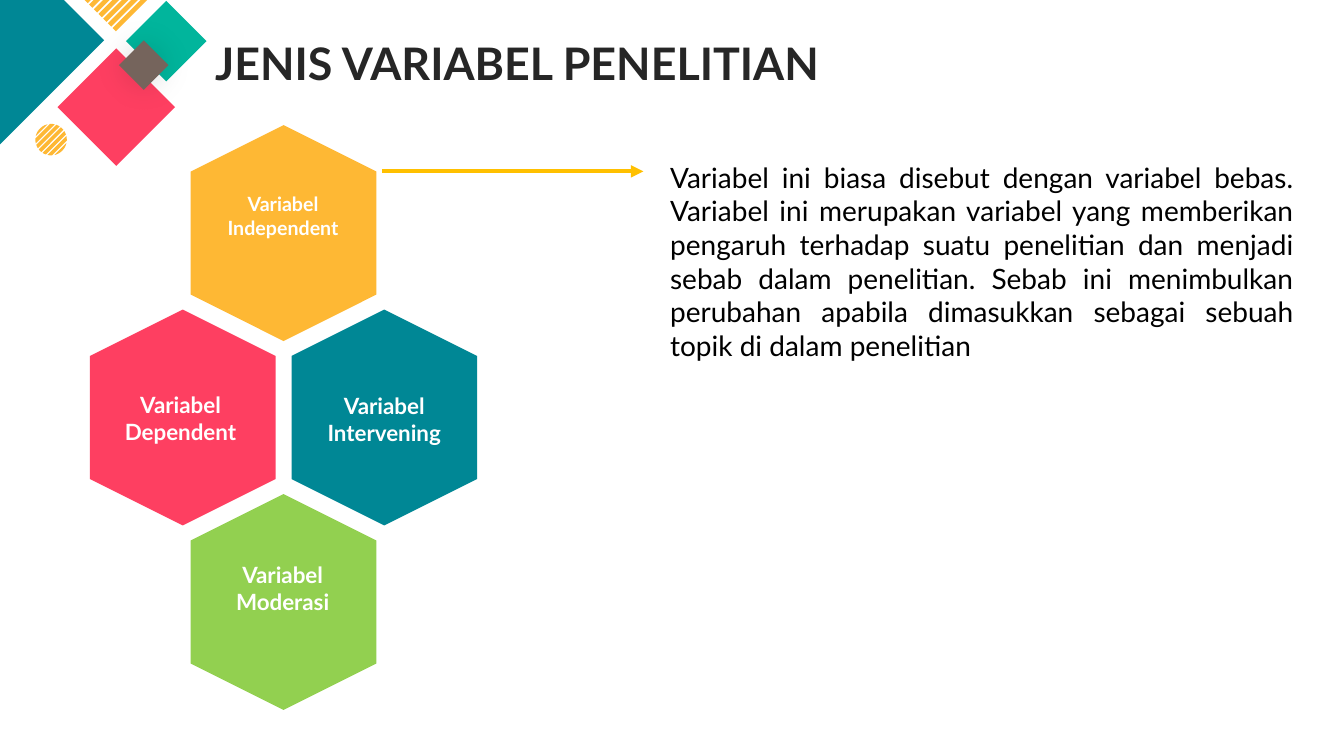
from dataclasses import dataclass
from math import cos, pi, sin

from lxml import etree
from pptx import Presentation
from pptx import util as u
from pptx.dml.color import RGBColor
from pptx.enum import shapes, text
from pptx.oxml import ns

# Square grid: 160 columns by 90 rows
COLUMNS, ROWS = 160, 90
SLIDE_WIDTH, SLIDE_HEIGHT = u.Inches(13.3333), u.Inches(7.5)
CELL = SLIDE_HEIGHT / ROWS

TEAL = RGBColor(0x00, 0x87, 0x95)
RED = RGBColor(0xFE, 0x3F, 0x61)
AMBER = RGBColor(0xFE, 0xB8, 0x34)
MINT = RGBColor(0x01, 0xB5, 0x9C)
TAUPE = RGBColor(0x75, 0x64, 0x5C)
GREEN = RGBColor(0x92, 0xD0, 0x50)
GOLD = RGBColor(0xFF, 0xC0, 0x00)
INK = RGBColor(0x26, 0x26, 0x26)
BLACK = RGBColor(0x00, 0x00, 0x00)
WHITE = RGBColor(0xFF, 0xFF, 0xFF)

HEXAGON_LENGTH, HEXAGON_BREADTH = 25.7, 22.1
HEXAGON_LEFT, HEXAGON_TOP = 20.9, 16.7
HEXAGON_STEP_X, HEXAGON_STEP_Y = 12, 21.96

FRAME_FORMAT = {
    "auto_size": text.MSO_AUTO_SIZE.SHAPE_TO_FIT_TEXT,
    "vertical_anchor": text.MSO_ANCHOR.TOP,
}


@dataclass(frozen=True)
class Box:
    left: float
    top: float
    width: float
    height: float


@dataclass(frozen=True)
class Diamond:
    left: float
    top: float
    size: float
    color: RGBColor


@dataclass(frozen=True)
class Variable:
    label: str
    column: int
    row: int
    color: RGBColor
    label_box: Box
    size: int = 16


DIAMONDS = (
    Diamond(-12.6, -7.7, 25, TEAL),
    Diamond(6.84, 5.76, 14, RED),
    Diamond(15, 0.1, 9.6, MINT),
    Diamond(14.16, 4.8, 5.9, TAUPE),
)
VARIABLES = (
    Variable("Variabel Independent", 0, 0, AMBER, Box(24.4, 22.3, 18.6, 6.8), 14),
    Variable("Variabel Dependent", -1, 1, RED, Box(12.6, 46, 17.8, 6.5)),
    Variable("Variabel Intervening", 1, 1, TEAL, Box(35.6, 46.1, 20.3, 7.7)),
    Variable("Variabel Moderasi", 0, 2, GREEN, Box(23.5, 66.2, 20.3, 7.7)),
)
EXPLANATION = (
    "Variabel ini biasa disebut dengan variabel bebas. Variabel ini merupakan "
    "variabel yang memberikan pengaruh terhadap suatu penelitian dan menjadi "
    "sebab dalam penelitian. Sebab ini menimbulkan perubahan apabila dimasukkan "
    "sebagai sebuah topik di dalam penelitian"
)


def cells(count: float) -> int:
    return round(count * CELL)


def place(box: Box) -> tuple[int, ...]:
    return tuple(cells(n) for n in (box.left, box.top, box.width, box.height))


def paint(shape, color: RGBColor, rotation: float = 0) -> None:
    shape.shadow.inherit = False
    shape.fill.solid()
    shape.fill.fore_color.rgb = color
    shape.line.fill.background()
    shape.rotation = rotation


def add_solid(slide, preset, box: Box, color: RGBColor, rotation: float = 0):
    solid = slide.shapes.add_shape(preset, *place(box))
    paint(solid, color, rotation)
    return solid


def add_words(slide, box: Box, words: str, size: int, color: RGBColor,
              bold: bool = True, align=text.PP_ALIGN.CENTER, wrap: bool = True) -> None:
    frame = slide.shapes.add_textbox(*place(box)).text_frame
    for name, value in {**FRAME_FORMAT, "word_wrap": wrap}.items():
        setattr(frame, name, value)
    paragraph = frame.paragraphs[0]
    paragraph.alignment = align
    run = paragraph.add_run()
    run.text = words
    font_format = {"name": "Lato", "size": u.Pt(size), "bold": bold}
    for name, value in font_format.items():
        setattr(run.font, name, value)
    run.font.color.rgb = color


def add_glow_shadow(shape) -> None:
    effects = shape._element.spPr.find(ns.qn("a:effectLst"))
    shadow = etree.SubElement(effects, ns.qn("a:outerShdw"),
                              blurRad=str(u.Pt(21)), dist="0", dir="0",
                              algn="ctr", rotWithShape="0")
    shade = etree.SubElement(shadow, ns.qn("a:srgbClr"), val="000000")
    etree.SubElement(shade, ns.qn("a:alpha"), val="13000")


def add_striped_disc(slide, center_x: float, center_y: float, radius: float) -> None:
    """Cut a disc into seven upright bands and turn it by 45 degrees."""
    pitch, half_band, steps = 0.32, 0.115, 8
    builder = None
    for band in range(-3, 4):
        # Shares of the radius where the band starts and ends
        start = max(band * pitch - half_band, -1)
        end = min(band * pitch + half_band, 1)
        if band == -3:
            start = -1
        elif band == 3:
            end = 1
        across = [start + (end - start) * i / steps for i in range(steps + 1)]
        upper = [(x, -(1 - x * x) ** 0.5) for x in across]
        outline = upper + [(x, -y) for x, y in reversed(upper)]
        points = [(cells(center_x + radius * x), cells(center_y + radius * y))
                  for x, y in outline]
        if builder is None:
            builder = slide.shapes.build_freeform(*points[0])
        else:
            builder.move_to(*points[0])
        builder.add_line_segments(points[1:], close=True)
    paint(builder.convert_to_shape(), AMBER, 45)


def add_arrow(slide, start_x: float, end_x: float, y: float) -> None:
    arrow = slide.shapes.add_connector(
        shapes.MSO_CONNECTOR.STRAIGHT, cells(start_x), cells(y), cells(end_x), cells(y))
    arrow.line.color.rgb = GOLD
    arrow.line.width = u.Pt(3)
    etree.SubElement(arrow.line._get_or_add_ln(), ns.qn("a:tailEnd"), type="triangle")
    etree.SubElement(arrow._element.spPr, ns.qn("a:effectLst"))


def add_corner(slide) -> None:
    preset = shapes.MSO_SHAPE
    *back, front = DIAMONDS

    def add_diamond(diamond: Diamond):
        box = Box(diamond.left, diamond.top, diamond.size, diamond.size)
        return add_solid(slide, preset.DIAMOND, box, diamond.color)

    for diamond in back:
        add_diamond(diamond)
    for i in range(7):
        stripe = Box(11.88 + 0.56 * i, -4.44 + 0.56 * i, 0.56, 5.4)
        add_solid(slide, preset.RECTANGLE, stripe, AMBER, 45)
    add_glow_shadow(add_diamond(front))
    add_striped_disc(slide, 6.08, 16.63, 1.87)


def add_variables(slide) -> None:
    for variable in VARIABLES:
        hexagon = Box(HEXAGON_LEFT + HEXAGON_STEP_X * variable.column,
                      HEXAGON_TOP + HEXAGON_STEP_Y * variable.row,
                      HEXAGON_LENGTH, HEXAGON_BREADTH)
        add_solid(slide, shapes.MSO_SHAPE.HEXAGON, hexagon, variable.color, 90)
        add_words(slide, variable.label_box, variable.label, variable.size, WHITE)


def main() -> None:
    deck = Presentation()
    deck.slide_width, deck.slide_height = SLIDE_WIDTH, SLIDE_HEIGHT
    slide = deck.slides.add_slide(deck.slide_layouts[6])

    # Corner decoration and title
    add_corner(slide)
    add_words(slide, Box(24.4, 3.7, 74.4, 7.7), "JENIS VARIABEL PENELITIAN",
              32, INK, wrap=False)

    # Honeycomb of variables, with the first one explained
    add_variables(slide)
    add_arrow(slide, 45.5, 76.6, 20.4)
    add_words(slide, Box(78.6, 18.5, 76.6, 29.5), EXPLANATION, 20, BLACK,
              bold=False, align=text.PP_ALIGN.JUSTIFY)

    deck.save("out.pptx")


if __name__ == "__main__":
    main()
